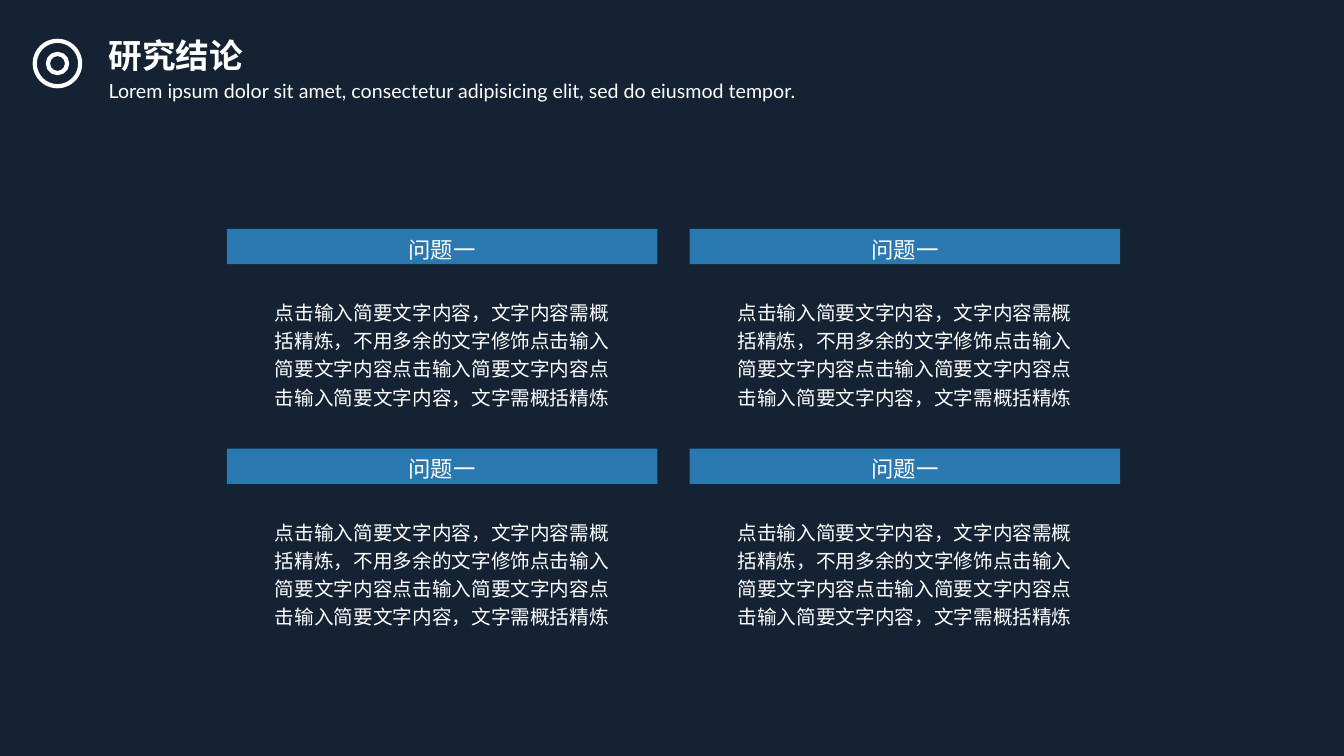
"""Build the research conclusions slide: a header and a two by two grid of questions."""
from pptx import Presentation
from pptx.dml.color import RGBColor
from pptx.enum.shapes import MSO_SHAPE
from pptx.enum.text import MSO_ANCHOR, MSO_AUTO_SIZE, PP_ALIGN
from pptx.util import Inches, Pt

NAVY, BLUE, WHITE = "142233", "2A78B0", "FFFFFF"
SUMMARY = (
    "点击输入简要文字内容，文字内容需概括精炼，不用多余的文字修饰"
    "点击输入简要文字内容点击输入简要文字内容"
    "点击输入简要文字内容，文字需概括精炼"
)


def paint(fill, colour):
    fill.solid()
    fill.fore_color.rgb = RGBColor.from_string(colour)


def write(box, text, size=14, bold=False, align=PP_ALIGN.LEFT, before=0,
          inset=(0.1, 0.05), anchor=MSO_ANCHOR.TOP, fit=MSO_AUTO_SIZE.SHAPE_TO_FIT_TEXT):
    frame = box.text_frame
    frame.word_wrap = True
    frame.auto_size = fit
    frame.vertical_anchor = anchor
    frame.margin_left = frame.margin_right = Inches(inset[0])
    frame.margin_top = frame.margin_bottom = Inches(inset[1])
    para = frame.paragraphs[0]
    para.alignment = align
    para.line_spacing = 1.2
    para.space_before = Pt(before)
    span = para.add_run()
    span.text = text
    span.font.name = "Lato"
    span.font.size = Pt(size)
    span.font.bold = bold
    paint(span.font.fill, WHITE)


deck = Presentation()
deck.slide_width, deck.slide_height = Inches(13.33), Inches(7.5)
page = deck.slides.add_slide(deck.slide_layouts[6])
paint(page.background.fill, NAVY)

grid_left, grid_top = 2.25, 2.27
column_step, row_step = 4.59, 2.18
bar_width, bar_height = 4.27, 0.35
body_width, body_height, body_drop = 3.63, 1.23, 0.62

for row in range(2):
    for column in range(2):
        left = grid_left + column * column_step
        top = grid_top + row * row_step
        bar = page.shapes.add_shape(MSO_SHAPE.RECTANGLE, Inches(left), Inches(top),
                                    Inches(bar_width), Inches(bar_height))
        bar.shadow.inherit = False
        paint(bar.fill, BLUE)
        bar.line.fill.background()
        write(bar, "问题一", size=16, align=PP_ALIGN.CENTER, inset=(0.11, 0.11),
              anchor=MSO_ANCHOR.MIDDLE, fit=MSO_AUTO_SIZE.NONE)
        body_left = left + (bar_width - body_width) / 2
        body = page.shapes.add_textbox(Inches(body_left), Inches(top + body_drop),
                                       Inches(body_width), Inches(body_height))
        write(body, SUMMARY, align=PP_ALIGN.CENTER)

subtitle = page.shapes.add_textbox(Inches(0.98), Inches(0.69), Inches(7.85), Inches(0.36))
write(subtitle, "Lorem ipsum dolor sit amet, consectetur adipisicing elit, sed do eiusmod tempor.",
      before=10)
title = page.shapes.add_textbox(Inches(0.98), Inches(0.22), Inches(2.9), Inches(0.54))
write(title, "研究结论", size=24, bold=True)

target = page.shapes.add_group_shape()
centre_x, centre_y = 0.57, 0.63
for diameter in (0.45, 0.19):
    ring = target.shapes.add_shape(MSO_SHAPE.OVAL, Inches(centre_x - diameter / 2),
                                   Inches(centre_y - diameter / 2),
                                   Inches(diameter), Inches(diameter))
    ring.shadow.inherit = False
    ring.fill.background()
    paint(ring.line.fill, WHITE)
    ring.line.width = Pt(3)

deck.save("out.pptx")
